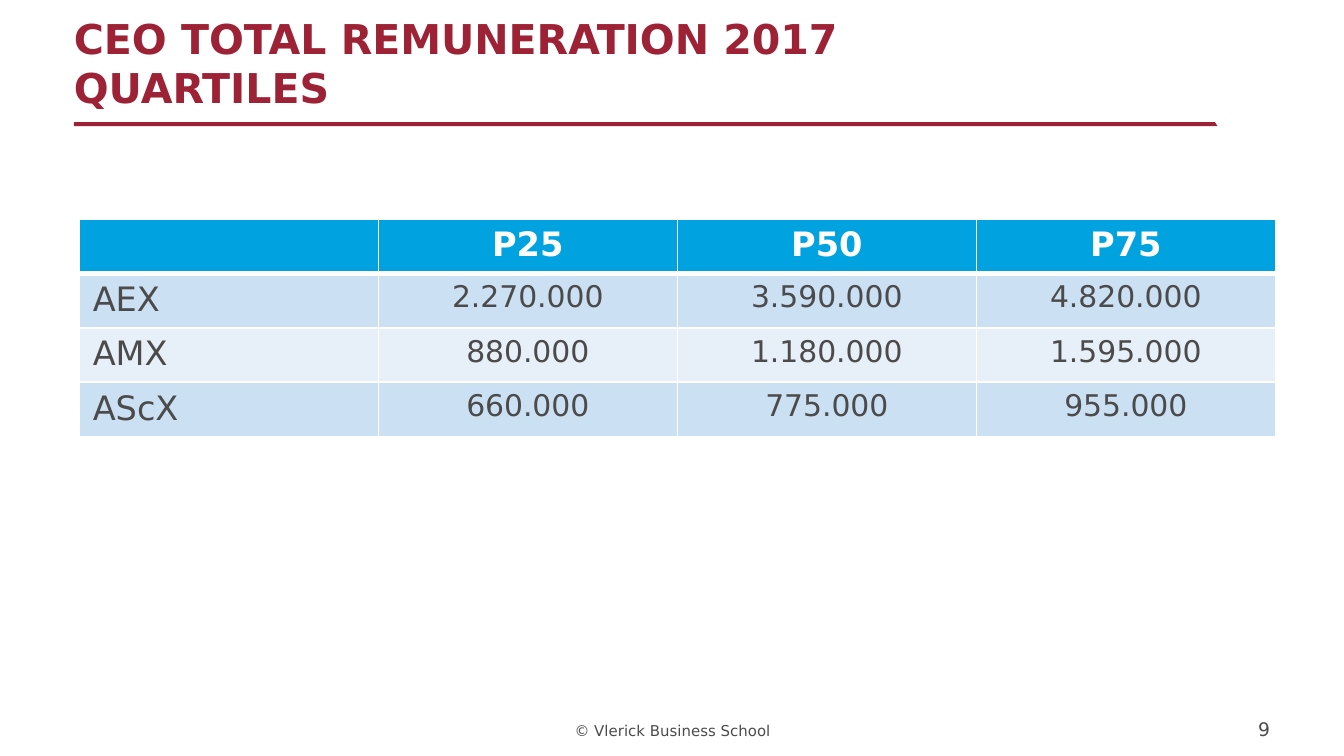
import copy
import pptx
import pptx.dml.color
import pptx.enum.text
import pptx.oxml
import pptx.oxml.ns
import pptx.util

Inches, Pt = pptx.util.Inches, pptx.util.Pt
RGB = pptx.dml.color.RGBColor
Align = pptx.enum.text.PP_ALIGN
Anchor = pptx.enum.text.MSO_ANCHOR
Fit = pptx.enum.text.MSO_AUTO_SIZE

# Content
TITLE = ["CEO TOTAL REMUNERATION 2017", "QUARTILES"]
ROWS = [
    ("", "P25", "P50", "P75"),
    ("AEX", "2.270.000", "3.590.000", "4.820.000"),
    ("AMX", "880.000", "1.180.000", "1.595.000"),
    ("AScX", "660.000", "775.000", "955.000"),
]
FOOTER = "© Vlerick Business School"
NUMBER = "9"

# Style
FONT = "DejaVu Sans"
RED = RGB(0x9D, 0x22, 0x35)
GRAY = RGB(0x4B, 0x4B, 0x4B)
WHITE = RGB(0xFF, 0xFF, 0xFF)
BLUE = RGB(0x00, 0xA3, 0xE0)
BANDS = [RGB(0xE7, 0xF0, 0xF9), RGB(0xCC, 0xE0, 0xF3)]


def write(frame, *lines, size=18, color=GRAY, bold=False, align=Align.LEFT):
    """Write lines as one paragraph with line breaks."""
    para = frame.paragraphs[0]
    para.alignment = align
    for i, line in enumerate(lines):
        if i:
            para.add_line_break()
        run = para.add_run()
        run.text = line
        font = run.font
        font.name, font.size, font.bold = FONT, Pt(size), bold
        font.color.rgb = color
    # Breaks take the size of the text around them
    for mark in para._p.findall(pptx.oxml.ns.qn("a:br")):
        mark.append(copy.deepcopy(font._element))


def place(shape, left, top, width, height):
    """Set the box of a text shape, without insets, anchored low."""
    shape.left, shape.top = Inches(left), Inches(top)
    shape.width, shape.height = Inches(width), Inches(height)
    frame = shape.text_frame
    frame.word_wrap = True
    frame.auto_size = Fit.NONE
    frame.vertical_anchor = Anchor.BOTTOM
    frame.margin_left = frame.margin_right = 0
    frame.margin_top = frame.margin_bottom = 0
    return frame


def border(cell, **widths):
    """Draw white cell edges, given in points."""
    props = cell._tc.get_or_add_tcPr()
    for side, width in widths.items():
        props.append(pptx.oxml.parse_xml(
            f'<a:ln{side} {pptx.oxml.ns.nsdecls("a")} w="{Pt(width)}">'
            f'<a:solidFill><a:srgbClr val="{WHITE}"/></a:solidFill>'
            f'</a:ln{side}>'))


# Slide in 16:9
deck = pptx.Presentation()
deck.slide_width = Inches(10)
deck.slide_height = deck.slide_width * 9 // 16
slide = deck.slides.add_slide(deck.slide_layouts[5])
shapes = slide.shapes

# Footer
box = shapes.add_textbox(0, 0, 0, 0)
frame = place(box, 3.94, 5.35, 2.13, 0.16)
frame.margin_bottom = Inches(0.01)
write(frame, FOOTER, size=8, align=Align.CENTER)

# Rule with a slanted end
pen = shapes.build_freeform(Inches(0.55), Inches(0.91))
pen.add_line_segments([(Inches(x), Inches(y)) for x, y in
                       [(9.04, 0.91), (9.06, 0.94), (0.55, 0.94)]])
rule = pen.convert_to_shape()
rule.shadow.inherit = False
rule.fill.solid()
rule.fill.fore_color.rgb = RED
rule.line.fill.background()

# Title
frame = place(shapes.title, 0.55, 0, 8.27, 0.83)
write(frame, *TITLE, size=22, color=RED, bold=True)

# Table of quartiles
grid = shapes.add_table(len(ROWS), len(ROWS[0]), Inches(0.59), Inches(1.63),
                        Inches(8.9), Inches(1.62)).table
for r, row in enumerate(ROWS):
    head = r == 0
    for c, text in enumerate(row):
        cell = grid.cell(r, c)
        border(cell, L=1, R=1, T=3 if r == 1 else 1, B=3 if head else 1)
        cell.fill.solid()
        cell.fill.fore_color.rgb = BLUE if head else BANDS[r % 2]
        write(cell.text_frame, text, bold=head,
              size=18 if head or c == 0 else 16,
              color=WHITE if head else GRAY,
              align=Align.CENTER if c else Align.LEFT)

# Slide number
box = shapes.add_textbox(0, 0, 0, 0)
frame = place(box, 8.9, 5.35, 0.55, 0.16)
write(frame, NUMBER, size=10, align=Align.RIGHT)

deck.save("out.pptx")
